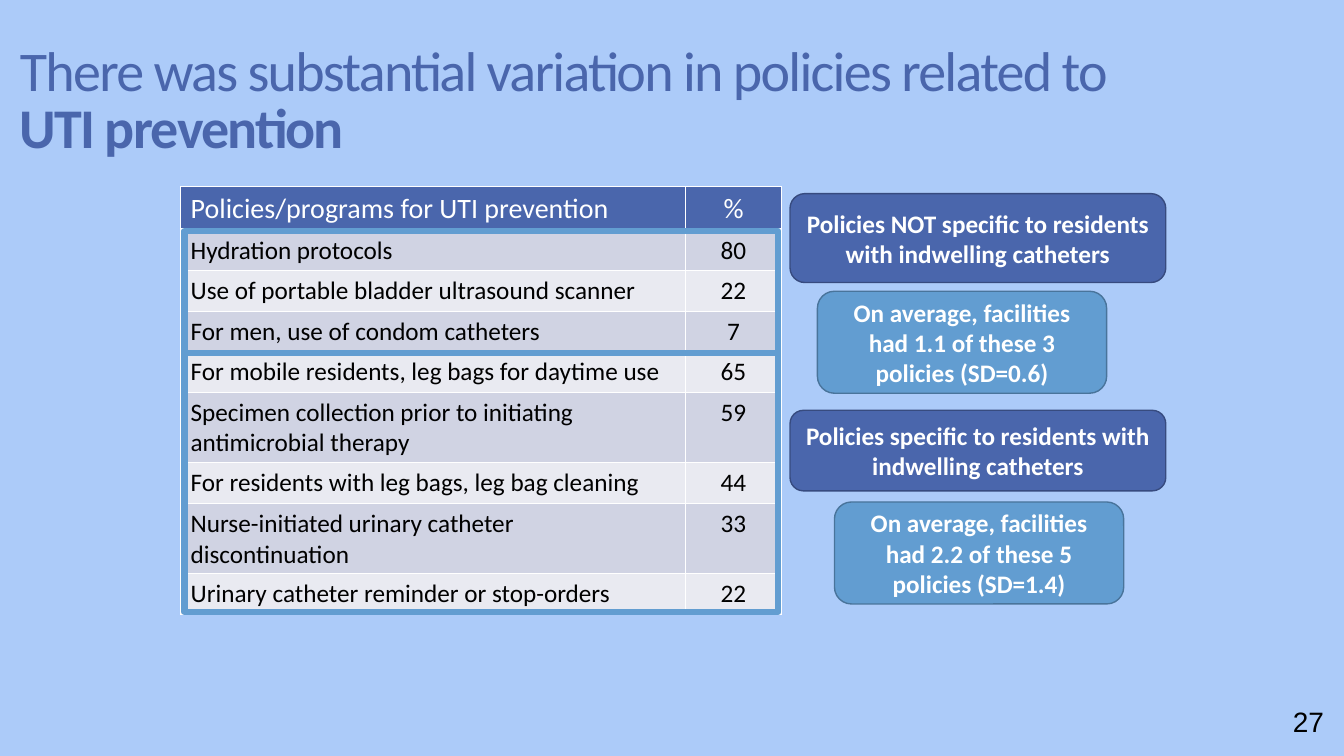
from dataclasses import dataclass

from lxml.etree import SubElement
from pptx import Presentation
from pptx.dml.color import RGBColor
from pptx.enum.shapes import MSO_SHAPE as Preset
from pptx.enum.text import MSO_ANCHOR as Anchor, PP_ALIGN as Align
from pptx.oxml import parse_xml
from pptx.oxml.ns import nsdecls, qn
from pptx.util import Cm, Pt


@dataclass(frozen=True)
class Theme:
    background: str = "ACCBF9"
    indigo: str = "4A66AC"
    indigo_edge: str = "374B7F"
    sky: str = "629DD1"
    sky_edge: str = "49749B"
    bands: tuple = ("D0D3E3", "E9EAF1")
    white: str = "FFFFFF"
    black: str = "000000"
    font: str = "Calibri"
    number_font: str = "Arial"
    title_size: int = 40
    header_size: int = 20
    body_size: int = 18


def rgb(value):
    return RGBColor.from_string(value)


def add_text(paragraph, text, *, font, size, color, bold=False, align=Align.LEFT, tracking=None):
    """Append one formatted run to a paragraph."""
    paragraph.alignment = align
    run = paragraph.add_run()
    run.text = text
    run.font.name, run.font.size, run.font.bold = font, Pt(size), bold
    run.font.color.rgb = rgb(color)
    if tracking is not None:
        run._r.get_or_add_rPr().set("spc", str(round(tracking * 100)))


class SlideBuilder:
    def __init__(self, slide, theme):
        self.slide, self.theme = slide, theme
        slide.background.fill.solid()
        slide.background.fill.fore_color.rgb = rgb(theme.background)

    def title(self, box, lead, emphasis):
        frame = self.slide.shapes.add_textbox(*map(Cm, box)).text_frame
        frame.word_wrap, frame.vertical_anchor = True, Anchor.MIDDLE
        frame.margin_right = Cm(0.5)
        heading = frame.paragraphs[0]
        heading.line_spacing = 0.85
        for words, bold in ((lead, False), (emphasis, True)):
            add_text(heading, words, font=self.theme.font, size=self.theme.title_size,
                     color=self.theme.indigo, bold=bold, tracking=-1.2)

    def outline(self, preset, box, edge, width):
        shape = self.slide.shapes.add_shape(preset, *map(Cm, box))
        shape.shadow.inherit = False
        shape.fill.background()
        shape.line.color.rgb, shape.line.width = rgb(edge), Pt(width)
        return shape

    def card(self, box, text, fill, edge):
        card = self.outline(Preset.ROUNDED_RECTANGLE, box, edge, 1)
        card.fill.solid()
        card.fill.fore_color.rgb = rgb(fill)
        frame = card.text_frame
        frame.word_wrap, frame.vertical_anchor = True, Anchor.MIDDLE
        add_text(frame.paragraphs[0], text, font=self.theme.font, size=self.theme.body_size,
                 color=self.theme.white, bold=True, align=Align.CENTER)

    def cell_borders(self, cell, bottom):
        properties = cell._tc.get_or_add_tcPr()
        sides = (("lnL", 1), ("lnR", 1), ("lnT", 1), ("lnB", bottom))
        for position, (side, width) in enumerate(sides):
            line = parse_xml(f'<a:{side} {nsdecls("a")} w="{Pt(width)}"/>')
            fill = SubElement(line, qn("a:solidFill"))
            SubElement(fill, qn("a:srgbClr"), val=self.theme.white)
            properties.insert(position, line)

    def table(self, left, top, widths, row_height, rows):
        theme = self.theme
        table = self.slide.shapes.add_table(
            len(rows), len(widths), Cm(left), Cm(top),
            Cm(sum(widths)), Cm(row_height * len(rows))).table
        table.first_row = table.horz_banding = False
        for column, width in zip(table.columns, widths):
            column.width = Cm(width)
        for r, values in enumerate(rows):
            header = r == 0
            for c, value in enumerate(values):
                cell = table.cell(r, c)
                cell.fill.solid()
                cell.fill.fore_color.rgb = rgb(theme.indigo if header else theme.bands[(r - 1) % 2])
                self.cell_borders(cell, bottom=3 if header else 1)
                add_text(cell.text_frame.paragraphs[0], value, font=theme.font,
                         size=theme.header_size if header else theme.body_size,
                         color=theme.white if header else theme.black,
                         align=Align.CENTER if c else Align.LEFT)

    def page_number(self, box, number):
        frame = self.slide.shapes.add_textbox(*map(Cm, box)).text_frame
        frame.word_wrap = False
        add_text(frame.paragraphs[0], number, font=self.theme.number_font,
                 size=self.theme.header_size, color=self.theme.black)


POLICIES = [
    ("Policies/programs for UTI prevention", "%"),
    ("Hydration protocols", "80"),
    ("Use of portable bladder ultrasound scanner", "22"),
    ("For men, use of condom catheters", "7"),
    ("For mobile residents, leg bags for daytime use", "65"),
    ("Specimen collection prior to initiating antimicrobial therapy", "59"),
    ("For residents with leg bags, leg bag cleaning", "44"),
    ("Nurse-initiated urinary catheter discontinuation", "33"),
    ("Urinary catheter reminder or stop-orders", "22"),
]


def main():
    deck = Presentation()
    deck.slide_width, deck.slide_height = Cm(33.87), Cm(19.05)
    theme = Theme()
    page = SlideBuilder(deck.slides.add_slide(deck.slide_layouts[6]), theme)

    page.title((0.25, 0.3, 29.92, 4.6),
               "There was substantial variation in policies related to ", "UTI prevention")
    page.table(4.55, 4.7, (12.73, 2.41), 1.02, POLICIES)

    # Average policy counts
    for left, top, average in (
            (20.6, 7.34, "On average, facilities had 1.1 of these 3 policies (SD=0.6)"),
            (21.03, 12.65, "On average, facilities had 2.2 of these 5 policies (SD=1.4)")):
        page.card((left, top, 7.29, 2.57), average, theme.sky, theme.sky_edge)

    # Policy group labels
    for top, height, group in (
            (4.88, 2.24, "Policies NOT specific to residents with indwelling catheters"),
            (10.34, 2.03, "Policies specific to residents with indwelling catheters")):
        page.card((19.91, top, 9.47, height), group, theme.indigo, theme.indigo_edge)

    # Frames around the two policy groups
    for top, height in ((5.82, 3.07), (8.89, 6.53)):
        page.outline(Preset.RECTANGLE, (4.65, top, 14.96, height), theme.sky, 4.5)

    page.page_number((32.33, 17.63, 1.3, 1.12), "27")
    deck.save("out.pptx")


if __name__ == "__main__":
    main()
